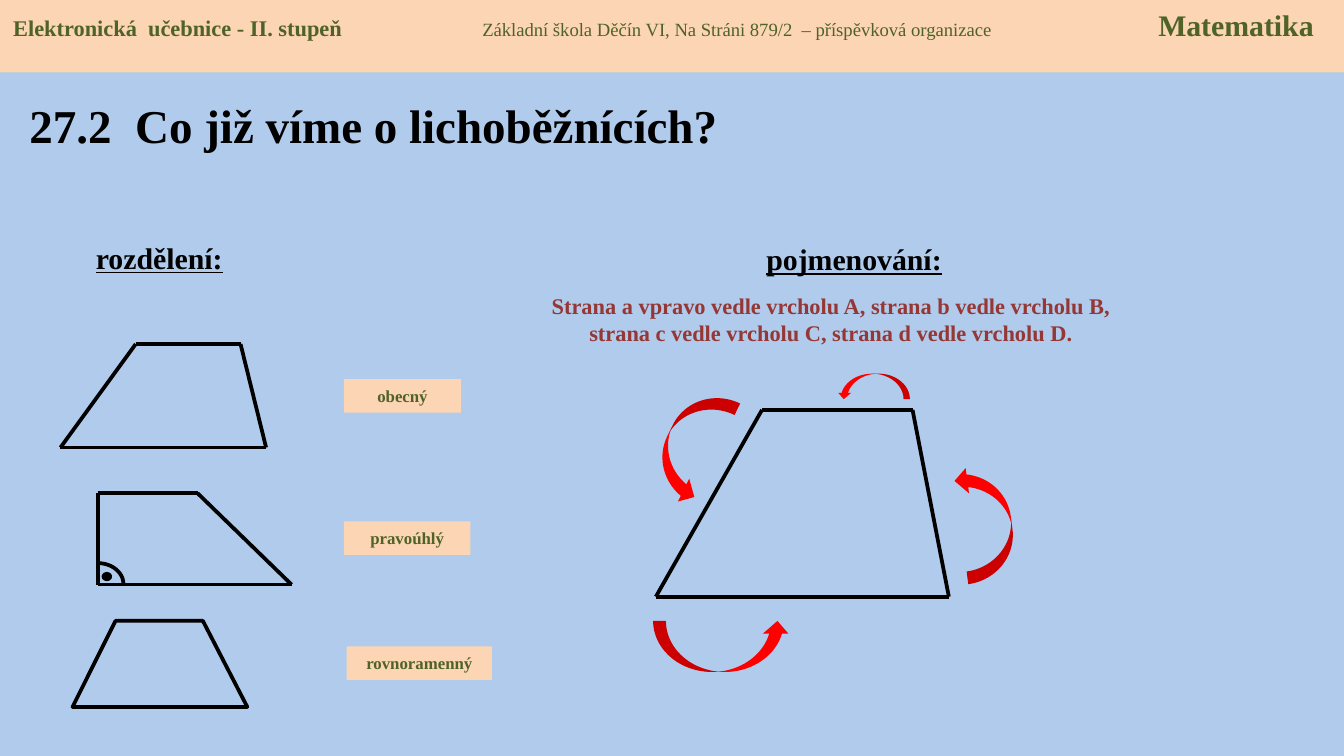
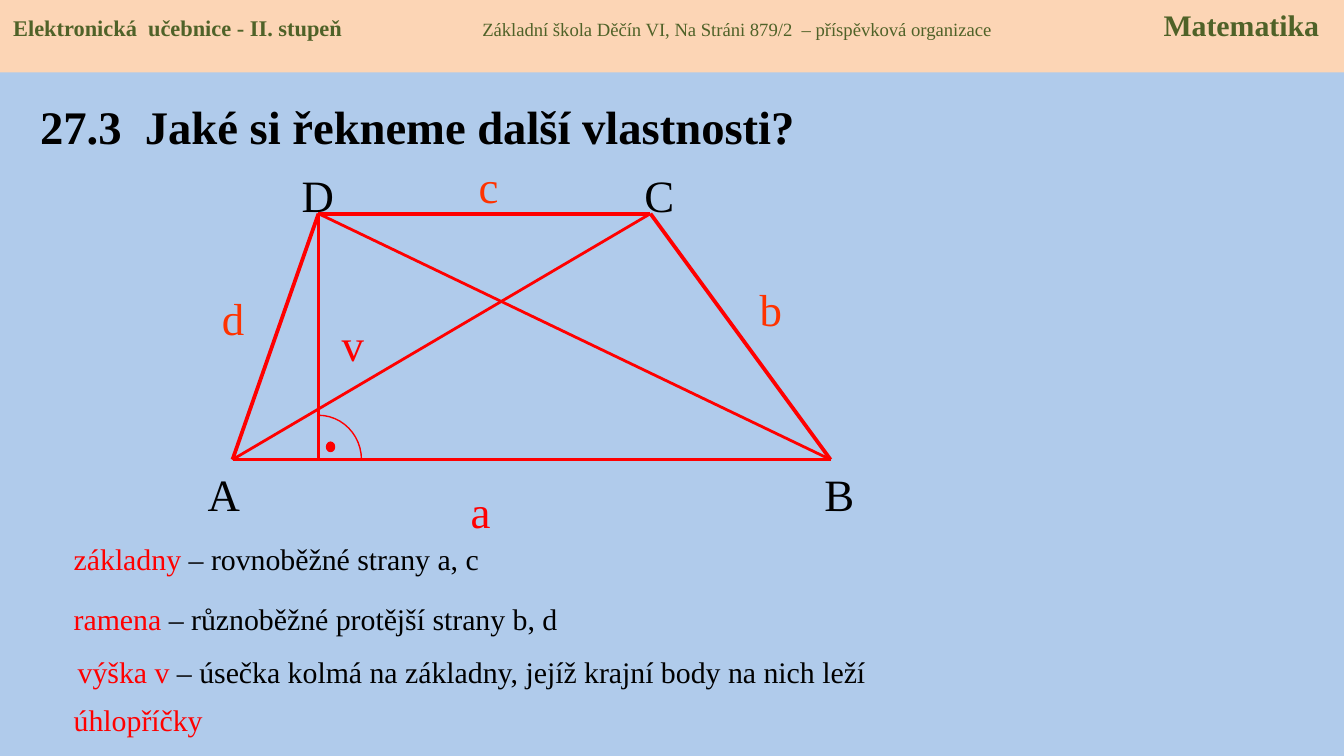
from itertools import pairwise

from lxml import etree
from pptx import Presentation
from pptx import util as u
from pptx.dml.color import RGBColor
from pptx.enum import shapes, text
from pptx.oxml.ns import qn

# Square grid: the slide is 100 columns by 56.25 rows
CELL = u.Inches(0.1)
COLUMNS, ROWS = 100, 56.25
BAND_ROWS = 5.4

FONT = "Times New Roman"
SKY = RGBColor(0xB0, 0xCB, 0xEB)
PEACH = RGBColor(0xFC, 0xD5, 0xB5)
OLIVE = RGBColor(0x4F, 0x62, 0x28)
MAROON = RGBColor(0x95, 0x37, 0x35)
BLACK = RGBColor(0, 0, 0)
RED = RGBColor(0xFF, 0, 0)
ORANGE = RGBColor(0xFF, 0x33, 0)
LEFT, CENTER = text.PP_ALIGN.LEFT, text.PP_ALIGN.CENTER
SHAPE = shapes.MSO_SHAPE


def cells(*counts):
    """Turn grid counts into slide lengths."""
    return [u.Emu(round(CELL * count)) for count in counts]


def write(box, spans, align=LEFT, anchor=text.MSO_ANCHOR.MIDDLE):
    """Fill a box with one paragraph of (words, size, colour, bold) spans."""
    frame = box.text_frame
    frame.word_wrap = True
    frame.vertical_anchor = anchor
    para = frame.paragraphs[0]
    para.alignment = align
    for words, size, color, bold in spans:
        span = para.add_run()
        span.text = words
        span.font.name = FONT
        span.font.size = u.Pt(size)
        span.font.color.rgb = color
        span.font.bold = bold
    return para


deck = Presentation()
deck.slide_width, deck.slide_height = cells(COLUMNS, ROWS)

# Background, header band and title of each slide
pages = []
for title, place, size, subject_column in [
    ("27.2  Co již víme o lichoběžnících?", (1.2, 4.5, 55.1, 9.6), 25.2, 85.2),
    ("27.3  Jaké si řekneme další vlastnosti?", (2, 6.1, 66.9, 6.5), 25, 85.6),
]:
    page = deck.slides.add_slide(deck.slide_layouts[6])
    pages.append(page)
    page.background.fill.solid()
    page.background.fill.fore_color.rgb = SKY
    write(page.shapes.add_textbox(*cells(*place)), [(title, size, BLACK, True)])

    band = page.shapes.add_shape(SHAPE.RECTANGLE, *cells(0, 0, COLUMNS, BAND_ROWS))
    band.shadow.inherit = False
    band.fill.solid()
    band.fill.fore_color.rgb = PEACH
    band.line.fill.background()
    para = write(band, [
        ("Elektronická  učebnice - II. stupeň\t", 12, OLIVE, True),
        ("Základní škola Děčín VI, Na Stráni 879/2  – příspěvková organizace\t",
         10, OLIVE, False),
        ("Matematika", 16, OLIVE, True),
    ], anchor=text.MSO_ANCHOR.TOP)
    tabs = etree.SubElement(para._p.get_or_add_pPr(), qn("a:tabLst"))
    for stop in cells(34.9, subject_column):
        etree.SubElement(tabs, qn("a:tab"), pos=str(int(stop)), algn="l")

kinds, properties = pages

# Slide 1: headings, naming rule and kinds of trapezoid
for words, left, top in [("rozdělení:", 2, 16.3), ("pojmenování:", 53.7, 16.4)]:
    box = kinds.shapes.add_textbox(*cells(left, top, 19.7, 5.7))
    para = write(box, [(words, 16, BLACK, True)], CENTER)
    para.runs[0].font.underline = True

rule = kinds.shapes.add_textbox(*cells(39.8, 21.8, 44.1, 3.9))
write(rule, [("Strana a vpravo vedle vrcholu A, strana b vedle vrcholu B, "
              "strana c vedle vrcholu C, strana d vedle vrcholu D.",
              12, MAROON, True)], CENTER)

for words, left, top, width in [
    ("obecný", 25.6, 28.2, 8.7),
    ("pravoúhlý", 25.6, 38.8, 9.4),
    ("rovnoramenný", 25.8, 48.1, 10.8),
]:
    tag = kinds.shapes.add_shape(SHAPE.RECTANGLE, *cells(left, top, width, 2.5))
    tag.shadow.inherit = False
    tag.fill.solid()
    tag.fill.fore_color.rgb = PEACH
    tag.line.fill.background()
    write(tag, [(words, 9, OLIVE, True)], CENTER)

for place, turn in [
    ((48.6, 46.2, 10.2, 3.8), 0),
    ((69, 37, 8.7, 3.8), 262.4),
    ((62.3, 27.8, 5.4, 1.9), 180),
    ((47.1, 31.2, 8.7, 3.8), 116.1),
]:
    arrow = kinds.shapes.add_shape(SHAPE.CURVED_UP_ARROW, *cells(*place))
    arrow.shadow.inherit = False
    arrow.rotation = turn
    arrow.fill.solid()
    arrow.fill.fore_color.rgb = RED
    arrow.line.fill.background()

isosceles = [cells(*corner) for corner in
             [(5.4, 52.6), (8.6, 46.2), (15.1, 46.2), (18.4, 52.6)]]
builder = kinds.shapes.build_freeform(*isosceles[0])
builder.add_line_segments(isosceles[1:], close=True)
outline = builder.convert_to_shape()
outline.shadow.inherit = False
outline.fill.background()
outline.line.color.rgb = BLACK
outline.line.width = u.Pt(2)

# Sides, diagonals and height as chains of corners
general = [(4.5, 33.3), (10.1, 25.6), (17.9, 25.6), (19.8, 33.3)]
right_angled = [(7.3, 43.5), (7.3, 36.7), (14.7, 36.7), (21.7, 43.5)]
named = [(48.8, 44.4), (56.7, 30.5), (67.9, 30.5), (70.6, 44.4)]
A, B, C, D = (17.3, 34.2), (61.8, 34.2), (48.4, 15.9), (23.7, 15.9)
foot = (D[0], A[1])

for page, chain, color, width in [
    (kinds, general + general[:1], BLACK, 2),
    (kinds, right_angled + right_angled[:1], BLACK, 2),
    (kinds, named + named[:1], BLACK, 2),
    (properties, [A, B, C, D, A], RED, 2),
    (properties, [D, foot], RED, 1.5),
    (properties, [A, C], RED, 1.5),
    (properties, [D, B], RED, 1.5),
]:
    for start, end in pairwise(chain):
        side = page.shapes.add_connector(
            shapes.MSO_CONNECTOR.STRAIGHT, *cells(*start, *end))
        side.line.color.rgb = color
        side.line.width = u.Pt(width)
        etree.SubElement(side._element.spPr, qn("a:effectLst"))

# Right-angle marks: a quarter arc around the corner and a dot
for page, (x, y), (across, up), dot_place, color, width in [
    (kinds, right_angled[0], (1.9, 1.6), (7.7, 42.7, 0.5, 0.4), BLACK, 2),
    (properties, foot, (3.2, 3.3), (24.3, 32.9, 0.6, 0.7), RED, 0.75),
]:
    arc_place = (x - across, y - up, 2 * across, 2 * up)
    for kind, place in [(SHAPE.ARC, arc_place), (SHAPE.OVAL, dot_place)]:
        mark = page.shapes.add_shape(kind, *cells(*place))
        mark.shadow.inherit = False
        mark.line.color.rgb = color
        mark.line.width = u.Pt(width)
        if kind == SHAPE.OVAL:
            mark.fill.solid()
            mark.fill.fore_color.rgb = color
        else:
            mark.fill.background()

# Slide 2: letters and definitions
for letter, left, top, color in [
    ("a", 33.2, 35.5, RED),
    ("c", 33.8, 11.3, ORANGE),
    ("b", 54.8, 20.5, ORANGE),
    ("d", 14.8, 21.1, ORANGE),
    ("v", 23.7, 23.1, RED),
    ("A", 14.1, 34.2, BLACK),
    ("B", 59.9, 34.2, BLACK),
    ("C", 46.5, 12, BLACK),
    ("D", 21.1, 12, BLACK),
]:
    box = properties.shapes.add_textbox(*cells(left, top, 5.1, 5))
    write(box, [(letter, 24, color, False)], CENTER)

for term, meaning, left, top, width in [
    ("základny", " – rovnoběžné strany a, c", 4.5, 39.7, 55.1),
    ("ramena", " – různoběžné protější strany b, d", 4.5, 44.2, 63.8),
    ("výška v", " – úsečka kolmá na základny, jejíž krajní body na nich leží",
     4.8, 48.1, 70.4),
    ("úhlopříčky", "", 4.5, 51.7, 55.1),
]:
    spans = [(term, 16, RED, False)]
    if meaning:
        spans.append((meaning, 16, BLACK, False))
    write(properties.shapes.add_textbox(*cells(left, top, width, 3.7)), spans)

deck.save("out.pptx")
